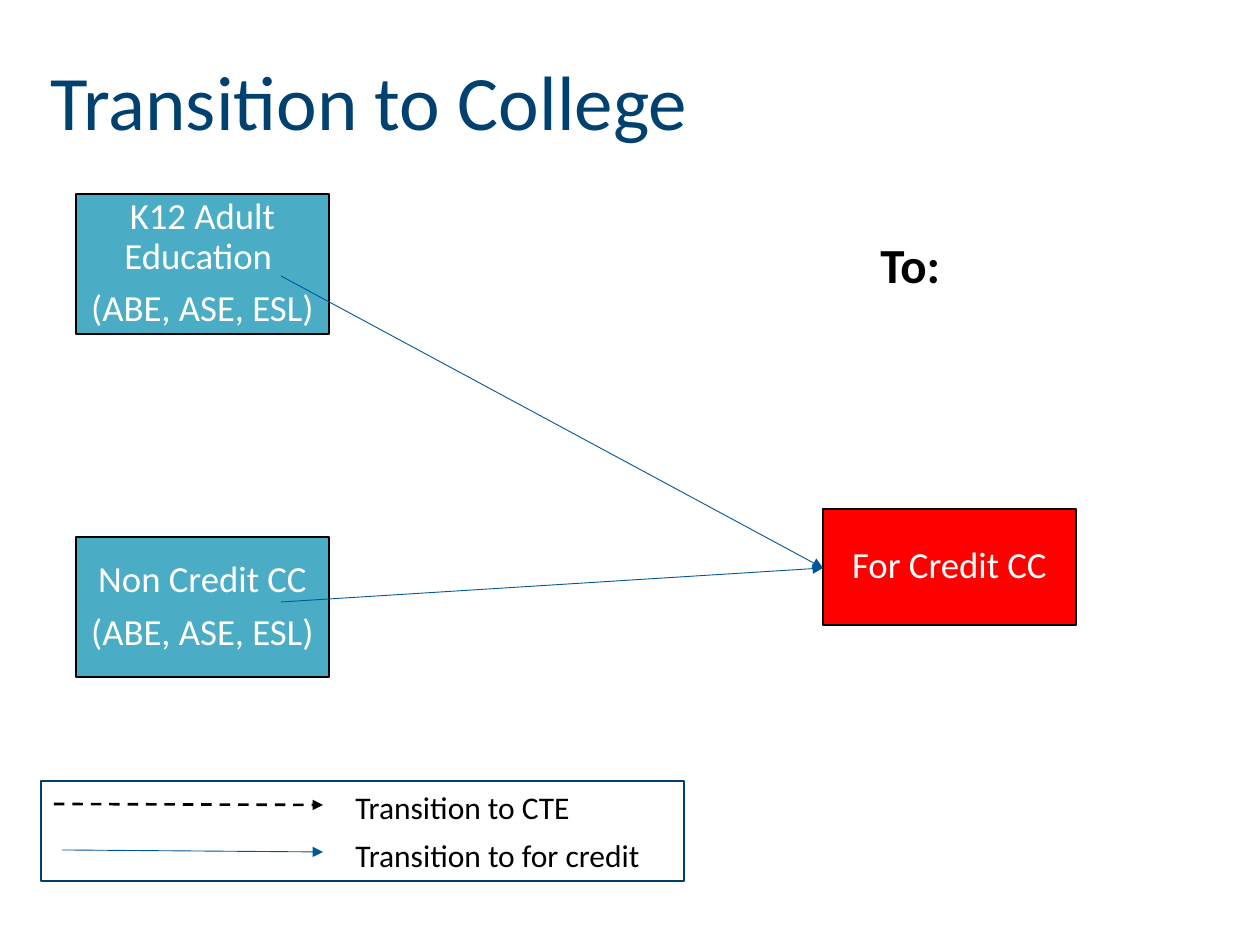
from dataclasses import dataclass

from lxml.etree import SubElement
from pptx import Presentation
from pptx.dml.color import RGBColor
from pptx.enum.dml import MSO_LINE
from pptx.enum.shapes import MSO_CONNECTOR, MSO_SHAPE
from pptx.enum.text import MSO_ANCHOR, PP_ALIGN
from pptx.oxml.ns import qn
from pptx.util import Emu, Pt


@dataclass(frozen=True)
class Theme:
    font: str = "Calibri"
    title: str = "004170"
    source: str = "4BACC6"
    target: str = "FF0000"
    arrow: str = "005796"
    legend: str = "00406F"
    dark: str = "000000"
    light: str = "FFFFFF"
    title_size: int = 44
    heading_size: int = 28
    box_size: int = 21
    legend_size: int = 18


THEME = Theme()
PX_PER_INCH = 126
BOX_WIDTH = 253
SOURCE_LEFT = 76
SOURCE_HEIGHT = 140
TARGET_LEFT = 823


def px(*lengths):
    return [Emu(round(length * 914400 / PX_PER_INCH)) for length in lengths]


def color(value):
    return RGBColor.from_string(value)


def format_runs(text_frame, size, text_color, bold=False):
    for paragraph in text_frame.paragraphs:
        for run in paragraph.runs:
            run.font.name = THEME.font
            run.font.size = Pt(size)
            run.font.bold = bold
            run.font.color.rgb = color(text_color)


def set_title(slide, text, area):
    title = slide.shapes.title
    title.left, title.top, title.width, title.height = px(*area)
    text_frame = title.text_frame
    text_frame.text = text
    text_frame.vertical_anchor = MSO_ANCHOR.MIDDLE
    text_frame.paragraphs[0].alignment = PP_ALIGN.LEFT
    format_runs(text_frame, THEME.title_size, THEME.title)


def add_rectangle(slide, area, line_color, line_width, fill=None):
    shape = slide.shapes.add_shape(MSO_SHAPE.RECTANGLE, *px(*area))
    shape.shadow.inherit = False
    if fill:
        shape.fill.solid()
        shape.fill.fore_color.rgb = color(fill)
    else:
        shape.fill.background()
    shape.line.color.rgb = color(line_color)
    shape.line.width = Pt(line_width)
    return shape


def add_program_box(slide, lines, area, fill):
    text_frame = add_rectangle(slide, area, THEME.dark, 0.75, fill).text_frame
    text_frame.word_wrap = True
    text_frame.vertical_anchor = MSO_ANCHOR.MIDDLE
    inset, = px(11)
    text_frame.margin_left = text_frame.margin_right = inset
    text_frame.margin_top = text_frame.margin_bottom = inset
    text_frame.text = "\n".join(lines)
    for paragraph in text_frame.paragraphs:
        paragraph.alignment = PP_ALIGN.CENTER
        paragraph.line_spacing = 0.9
        paragraph.space_after = Pt(7.35)
    format_runs(text_frame, THEME.box_size, THEME.light)


def add_label(slide, text, area, size, bold=False):
    text_frame = slide.shapes.add_textbox(*px(*area)).text_frame
    text_frame.word_wrap = True
    text_frame.text = text
    format_runs(text_frame, size, THEME.dark, bold)


def add_arrow(slide, start, end, line_color, width, dash=None):
    arrow = slide.shapes.add_connector(MSO_CONNECTOR.STRAIGHT, *px(*start, *end))
    arrow.line.color.rgb = color(line_color)
    arrow.line.width = Pt(width)
    if dash:
        arrow.line.dash_style = dash
    properties = arrow.element.spPr
    SubElement(properties.find(qn("a:ln")), qn("a:tailEnd"), type="triangle")
    SubElement(properties, qn("a:effectLst"))


def add_legend(slide):
    add_arrow(slide, (54, 804), (323, 805), THEME.dark, 1.5, MSO_LINE.DASH)
    add_arrow(slide, (62, 850), (323, 852), THEME.arrow, 0.5)
    add_label(slide, "Transition to CTE", (343, 782, 280, 50), THEME.legend_size)
    add_label(slide, "Transition to for credit", (343, 830, 320, 50), THEME.legend_size)
    add_rectangle(slide, (41, 781, 643, 100), THEME.legend, 1)


def main():
    presentation = Presentation()
    presentation.slide_width, presentation.slide_height = px(1260, 945)
    slide = presentation.slides.add_slide(presentation.slide_layouts[5])
    set_title(slide, "Transition to College", (38, 45, 830, 110))

    sources = [
        (("K12 Adult Education ", "(ABE, ASE, ESL)"), 194, 276),
        (("Non Credit CC", "(ABE, ASE, ESL)"), 537, 602),
    ]
    for lines, top, _ in sources:
        area = (SOURCE_LEFT, top, BOX_WIDTH, SOURCE_HEIGHT)
        add_program_box(slide, lines, area, THEME.source)
    target_area = (TARGET_LEFT, 509, BOX_WIDTH, 116)
    add_program_box(slide, ("For Credit CC",), target_area, THEME.target)
    for _, _, arrow_top in sources:
        add_arrow(slide, (281, arrow_top), (TARGET_LEFT, 568), THEME.arrow, 0.5)

    add_label(slide, "To:", (868, 228, 218, 72), THEME.heading_size, bold=True)
    add_legend(slide)
    presentation.save("out.pptx")


if __name__ == "__main__":
    main()
